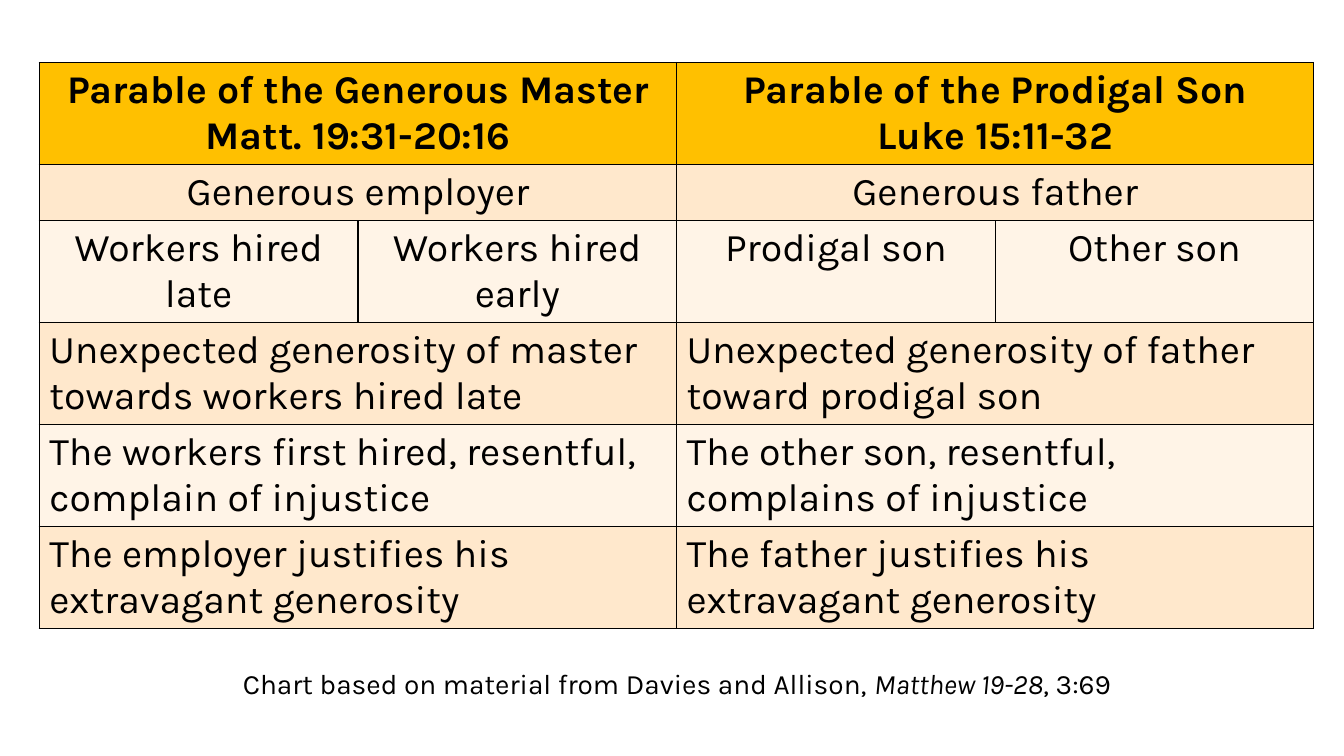
from lxml.etree import SubElement
from pptx import Presentation
from pptx.dml.color import RGBColor
from pptx.enum.text import MSO_AUTO_SIZE, PP_ALIGN as Align
from pptx.oxml.ns import qn
from pptx.util import Inches, Pt

COLORS = {"ink": "000000", "header": "FFC000", "band": "FFE8CC", "light": "FFF4E7"}
FONT = "Karla"
COLUMNS = 4
COLUMN_WIDTH = 3.16

# Each row: height, fill, alignment, bold, texts spread evenly over the columns
COMPARISON = [
    (1.01, "header", Align.CENTER, True,
     ["Parable of the Generous Master\nMatt. 19:31-20:16",
      "Parable of the Prodigal Son\nLuke 15:11-32"]),
    (0.56, "band", Align.CENTER, False, ["Generous employer", "Generous father"]),
    (1.01, "light", Align.CENTER, False,
     ["Workers hired late", "Workers hired early", "Prodigal son", "Other son"]),
    (1.01, "band", Align.LEFT, False,
     ["Unexpected generosity of master towards workers hired late",
      "Unexpected generosity of father toward prodigal son"]),
    (1.01, "light", Align.LEFT, False,
     ["The workers first hired, resentful, complain of injustice",
      "The other son, resentful, complains of injustice"]),
    (1.01, "band", Align.LEFT, False,
     ["The employer justifies his extravagant generosity",
      "The father justifies his extravagant generosity"]),
]
# Each part: text, italic
CITATION = [("Chart based on material from Davies and Allison, ", False),
            ("Matthew 19-28", True), (", 3:69", False)]


def style_run(run, size, bold=False, italic=False):
    font = run.font
    font.name, font.size = FONT, Pt(size)
    font.bold, font.italic = bold, italic
    font.color.rgb = RGBColor.from_string(COLORS["ink"])


def add_borders(cell):
    properties = cell._tc.get_or_add_tcPr()
    for side in ("a:lnL", "a:lnR", "a:lnT", "a:lnB"):
        border = SubElement(properties, qn(side), w=str(Pt(1)))
        fill = SubElement(border, qn("a:solidFill"))
        SubElement(fill, qn("a:srgbClr"), val=COLORS["ink"])


def write_cell(cell, text, align, bold):
    cell.text_frame.text = text
    for paragraph in cell.text_frame.paragraphs:
        paragraph.alignment = align
        for run in paragraph.runs:
            style_run(run, 28, bold)


def add_comparison(slide, left, top):
    height = sum(row[0] for row in COMPARISON)
    table = slide.shapes.add_table(
        len(COMPARISON), COLUMNS, Inches(left), Inches(top),
        Inches(COLUMNS * COLUMN_WIDTH), Inches(height)).table
    for column in table.columns:
        column.width = Inches(COLUMN_WIDTH)
    for index, (row_height, color, align, bold, texts) in enumerate(COMPARISON):
        table.rows[index].height = Inches(row_height)
        for column in range(COLUMNS):
            cell = table.cell(index, column)
            add_borders(cell)
            cell.fill.solid()
            cell.fill.fore_color.rgb = RGBColor.from_string(COLORS[color])
        span = COLUMNS // len(texts)
        for position, text in enumerate(texts):
            start = position * span
            cell = table.cell(index, start)
            if span > 1:
                cell.merge(table.cell(index, start + span - 1))
            write_cell(cell, text, align, bold)


def add_citation(slide, left, top, width, height):
    frame = slide.shapes.add_textbox(
        Inches(left), Inches(top), Inches(width), Inches(height)).text_frame
    frame.word_wrap = True
    frame.auto_size = MSO_AUTO_SIZE.SHAPE_TO_FIT_TEXT
    paragraph = frame.paragraphs[0]
    paragraph.alignment = Align.CENTER
    for text, italic in CITATION:
        run = paragraph.add_run()
        run.text = text
        style_run(run, 20, italic=italic)


def main():
    deck = Presentation()
    deck.slide_width, deck.slide_height = Inches(13.33), Inches(7.5)
    slide = deck.slides.add_slide(deck.slide_layouts[6])
    # Parables side by side
    add_comparison(slide, 0.39, 0.62)
    # Source of the comparison
    add_citation(slide, 1.98, 6.56, 9.47, 0.44)
    deck.save("out.pptx")


if __name__ == "__main__":
    main()
